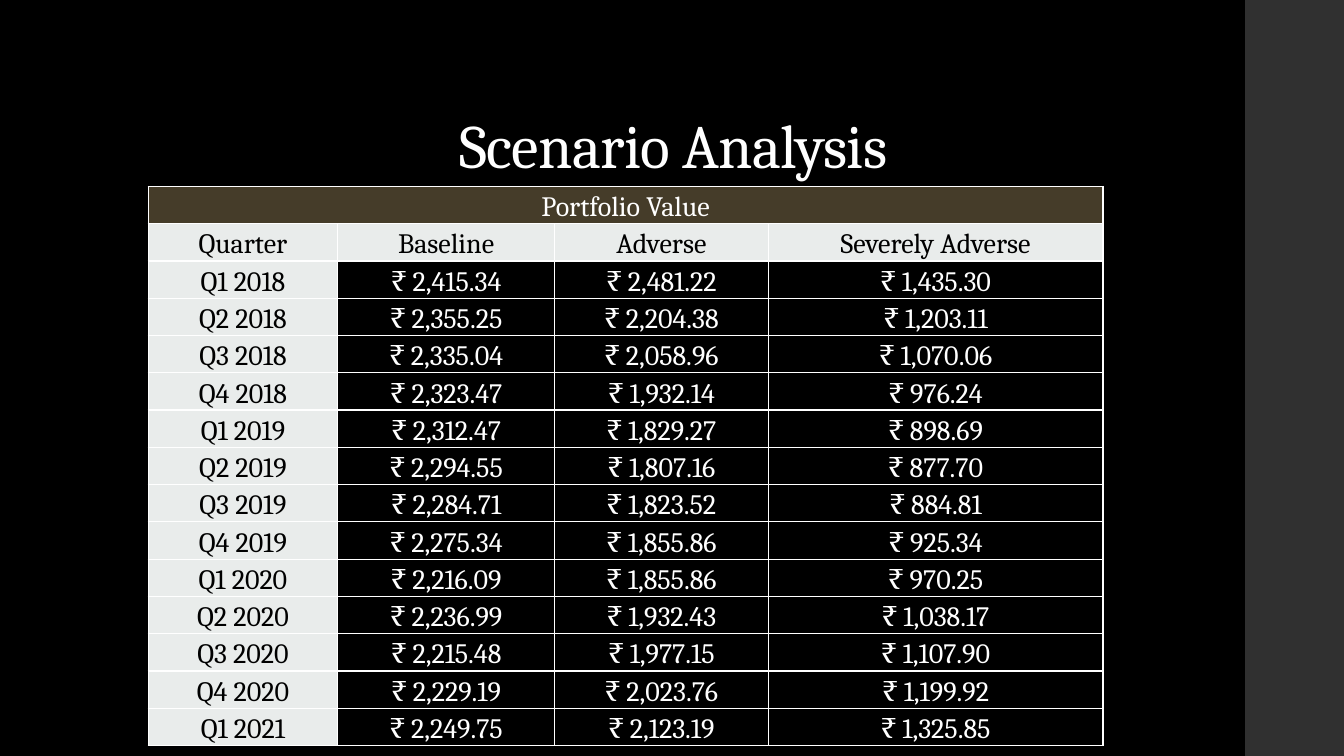
from lxml import etree
from pptx import Presentation
from pptx.dml.color import RGBColor
from pptx.enum.shapes import MSO_SHAPE
from pptx.enum.text import MSO_ANCHOR, PP_ALIGN
from pptx.oxml.ns import qn
from pptx.util import Inches, Pt

RECTANGLE = MSO_SHAPE.RECTANGLE
BOTTOM = MSO_ANCHOR.BOTTOM
CENTER = PP_ALIGN.CENTER
TITLE_ONLY = 5
BLACK, WHITE = "000000", "FFFFFF"
BAND, BROWN, PALE = "303030", "453C29", "E9ECEB"

COLUMN_WIDTHS = [1.88, 2.15, 2.12, 3.32]
ROW_HEIGHT = 0.37
CELL_FORMAT = {
    "vertical_anchor": BOTTOM,
    "margin_left": Inches(0.01),
    "margin_right": Inches(0.01),
    "margin_top": Inches(0.01),
    "margin_bottom": 0,
}
HEADINGS = ["Quarter", "Baseline", "Adverse", "Severely Adverse"]
PORTFOLIO_VALUES = [
    (2415.34, 2481.22, 1435.30),
    (2355.25, 2204.38, 1203.11),
    (2335.04, 2058.96, 1070.06),
    (2323.47, 1932.14, 976.24),
    (2312.47, 1829.27, 898.69),
    (2294.55, 1807.16, 877.70),
    (2284.71, 1823.52, 884.81),
    (2275.34, 1855.86, 925.34),
    (2216.09, 1855.86, 970.25),
    (2236.99, 1932.43, 1038.17),
    (2215.48, 1977.15, 1107.90),
    (2229.19, 2023.76, 1199.92),
    (2249.75, 2123.19, 1325.85),
]


def color(value):
    return RGBColor.from_string(value)


def write(para, text, size, ink):
    para.alignment = CENTER
    span = para.add_run()
    span.text = text
    span.font.name = "Cambria"
    span.font.size = Pt(size)
    span.font.color.rgb = color(ink)
    return span


deck = Presentation()
deck.slide_width, deck.slide_height = Inches(13.33), Inches(7.5)
page = deck.slides.add_slide(deck.slide_layouts[TITLE_ONLY])
page.background.fill.solid()
page.background.fill.fore_color.rgb = color(BLACK)

# Side band
band = page.shapes.add_shape(RECTANGLE, Inches(12.35), 0, Inches(0.98), Inches(7.5))
band.shadow.inherit = False
band.fill.solid()
band.fill.fore_color.rgb = color(BAND)
band.line.fill.background()

# Title
title = page.shapes.title
title.left, title.top = Inches(1.38), Inches(0.4)
title.width, title.height = Inches(10.6), Inches(1.45)
title.text_frame.vertical_anchor = BOTTOM
title_para = title.text_frame.paragraphs[0]
title_para.line_spacing = 0.9
title_span = write(title_para, "Scenario Analysis", 44, WHITE)
title_span.font._element.set("spc", "-50")

# Table rows: banner, headings, then one per quarter from Q1 2018
rows = [["Portfolio Value", "", "", ""], HEADINGS]
for index, values in enumerate(PORTFOLIO_VALUES):
    quarter = f"Q{index % 4 + 1} {2018 + index // 4}"
    rows.append([quarter] + [f"₹ {value:,.2f}" for value in values])

# Table
table = page.shapes.add_table(
    len(rows), len(HEADINGS), Inches(1.47), Inches(1.85),
    Inches(sum(COLUMN_WIDTHS)), Inches(ROW_HEIGHT * len(rows)),
).table
for column, width in zip(table.columns, COLUMN_WIDTHS):
    column.width = Inches(width)
table.cell(0, 0).merge(table.cell(0, len(HEADINGS) - 1))

for row_number, texts in enumerate(rows):
    table.rows[row_number].height = Inches(ROW_HEIGHT)
    for column_number, text in enumerate(texts):
        cell = table.cell(row_number, column_number)
        for name, value in CELL_FORMAT.items():
            setattr(cell, name, value)

        # White borders on all four sides
        properties = cell._tc.get_or_add_tcPr()
        for side in ("a:lnL", "a:lnR", "a:lnT", "a:lnB"):
            border = etree.SubElement(properties, qn(side), w=str(Pt(1)))
            border_fill = etree.SubElement(border, qn("a:solidFill"))
            etree.SubElement(border_fill, qn("a:srgbClr"), val=WHITE)

        # Brown banner, pale headings and quarters, clear values
        if row_number == 0:
            fill, ink = BROWN, WHITE
        elif row_number == 1 or column_number == 0:
            fill, ink = PALE, BLACK
        else:
            fill, ink = None, WHITE
        if fill:
            cell.fill.solid()
            cell.fill.fore_color.rgb = color(fill)
        else:
            cell.fill.background()
        if text:
            write(cell.text_frame.paragraphs[0], text, 20, ink).font.bold = False

deck.save("out.pptx")
